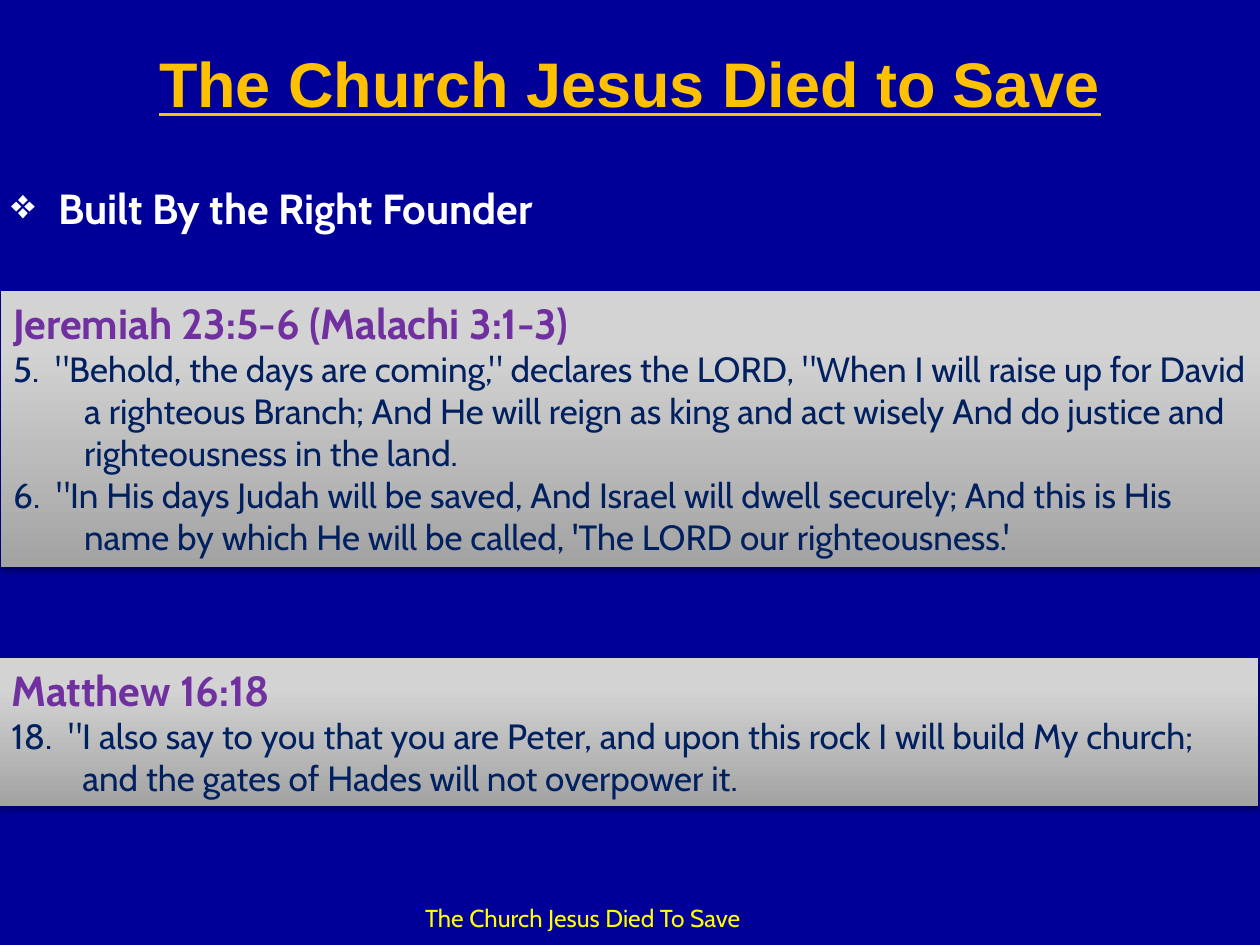
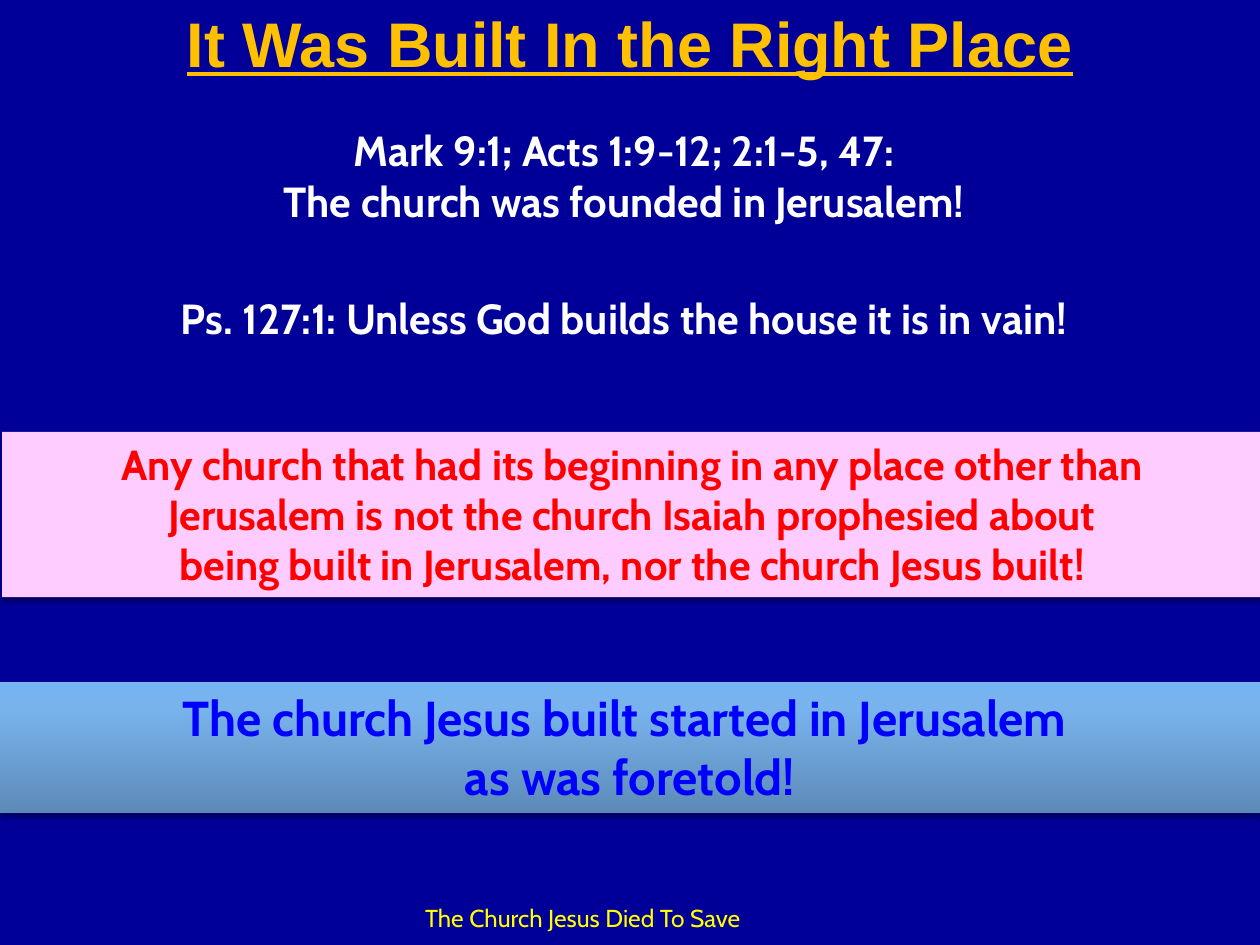
import copy

import lxml.etree
import pptx
import pptx.dml.color
import pptx.enum.shapes
import pptx.enum.text
import pptx.oxml.ns
import pptx.util

Pt = pptx.util.Pt
ALIGN = pptx.enum.text.PP_ALIGN
ANCHOR = pptx.enum.text.MSO_ANCHOR
qn = pptx.oxml.ns.qn

WIDTH, HEIGHT = 720, 540
NAVY, GOLD, YELLOW, WHITE = "000099", "FFC000", "FFFF00", "FFFFFF"
PURPLE, INK, RED, BLUE, PINK = "7030A0", "002060", "FF0000", "0000FF", "FFCCFF"
SILVER = ((0, "A3A3A3"), (0.8, "D3D3D3"), (1, "D4D4D4"))
SKY = ((0, "5D8AB7"), (0.8, "78B3ED"), (1, "76B4F1"))
FOOTER = "The Church Jesus Died To Save"


def rgb(value):
    """Turn a hex string into a colour."""
    return pptx.dml.color.RGBColor.from_string(value)


class Deck:
    """Hold the shared style and the current slide."""

    def __init__(self):
        """Start an empty presentation."""
        self.presentation = pptx.Presentation()
        self.presentation.slide_width = Pt(WIDTH)
        self.presentation.slide_height = Pt(HEIGHT)
        self.slide = None

    def add_slide(self, title, title_top):
        """Add a navy slide with its title and footer."""
        self.slide = self.presentation.slides.add_slide(self.presentation.slide_layouts[6])
        self.slide.background.fill.solid()
        self.slide.background.fill.fore_color.rgb = rgb(NAVY)
        heading = self.add_text((0, title_top, WIDTH, 48), [title], 36, GOLD, font="Arial")
        heading.text_frame.vertical_anchor = ANCHOR.MIDDLE
        heading.text_frame.paragraphs[0].runs[0].font.underline = True
        self.add_text((162, 512.6, 342, 27.4), [FOOTER], 14, YELLOW, bold=False)

    def add_text(self, box, lines, size, color, **style):
        """Add a text box of equally styled lines."""
        shape = self.slide.shapes.add_textbox(*map(Pt, box))
        self.set_lines(shape, lines, size, color, **style)
        return shape

    def set_lines(self, shape, lines, size, color, **style):
        """Fill a shape with equally styled lines."""
        shape.text_frame.word_wrap = True
        shape.text_frame.text = "\n".join(lines)
        for paragraph in shape.text_frame.paragraphs:
            self.style_paragraph(paragraph, size, color, **style)

    def style_paragraph(self, paragraph, size, color, bold=True, font="Cabin",
                        align=ALIGN.CENTER, hanging=0, bullet=None):
        """Set the alignment, hanging indent, bullet and font of a paragraph."""
        paragraph.alignment = align
        properties = paragraph._p.get_or_add_pPr()
        properties.set("marL", str(Pt(hanging)))
        properties.set("indent", str(-Pt(hanging)))
        if bullet:
            lxml.etree.SubElement(properties, qn("a:buChar"), char=bullet)
        for run in paragraph.runs:
            run.font.name = font
            run.font.size = Pt(size)
            run.font.bold = bold
            run.font.color.rgb = rgb(color)

    def add_band(self, box, fill):
        """Add a shadowed band with a solid or gradient fill."""
        shape = self.slide.shapes.add_shape(
            pptx.enum.shapes.MSO_SHAPE.RECTANGLE, *map(Pt, box))
        shape.line.fill.background()
        shape.text_frame.vertical_anchor = ANCHOR.TOP
        if isinstance(fill, str):
            shape.fill.solid()
            shape.fill.fore_color.rgb = rgb(fill)
        else:
            self.fill_gradient(shape, fill)
        self.add_shadow(shape)
        return shape

    def fill_gradient(self, shape, stops):
        """Fill a shape with three stops running upwards."""
        shape.fill.gradient()
        shape.fill.gradient_angle = 90
        stop_list = shape._element.spPr.find(".//" + qn("a:gsLst"))
        stop_list.append(copy.deepcopy(stop_list[-1]))
        for stop, (position, color) in zip(shape.fill.gradient_stops, stops):
            stop.position = position
            stop.color.rgb = rgb(color)

    def add_shadow(self, shape):
        """Give a shape a soft shadow below it."""
        shape.shadow.inherit = False
        effects = shape._element.spPr.find(qn("a:effectLst"))
        shadow = lxml.etree.SubElement(
            effects, qn("a:outerShdw"), blurRad=str(Pt(3.1)), dist=str(Pt(1.8)),
            dir="5400000", rotWithShape="0")
        color = lxml.etree.SubElement(shadow, qn("a:srgbClr"), val="000000")
        lxml.etree.SubElement(color, qn("a:alpha"), val="35000")

    def add_scripture(self, box, reference, verses):
        """Add a silver band with a reference above its verses."""
        shape = self.add_band(box, SILVER)
        self.set_lines(shape, [reference, *verses], 20, INK, bold=False,
                       align=ALIGN.LEFT, hanging=40.5)
        self.style_paragraph(shape.text_frame.paragraphs[0], 24, PURPLE,
                             align=ALIGN.LEFT, hanging=36)

    def add_statement(self, box, fill, lines, size, color):
        """Add a band with bold centred lines."""
        self.set_lines(self.add_band(box, fill), lines, size, color, hanging=36)


def main():
    """Build both slides and save them."""
    deck = Deck()

    deck.add_slide("The Church Jesus Died to Save", 23)
    deck.add_text((-0.7, 101, WIDTH, 36), ["Built By the Right Founder"], 24, WHITE,
                  align=ALIGN.LEFT, hanging=27, bullet="❖")
    deck.add_scripture((0.5, 166.4, 719.5, 157.6), "Jeremiah 23:5-6 (Malachi 3:1-3)", [
        "5.  \"Behold, the days are coming,\" declares the LORD, \"When I will raise up for "
        "David a righteous Branch; And He will reign as king and act wisely And do justice "
        "and righteousness in the land.",
        "6.  \"In His days Judah will be saved, And Israel will dwell securely; And this is "
        "His name by which He will be called, 'The LORD our righteousness.'"])
    deck.add_scripture((-0.5, 376, 719.5, 84.6), "Matthew 16:18", [
        "18.  \"I also say to you that you are Peter, and upon this rock I will build My "
        "church; and the gates of Hades will not overpower it."])

    deck.add_slide("It Was Built In the Right Place", 0)
    deck.add_text((-0.7, 163.6, WIDTH, 36),
                  ["Ps. 127:1: Unless God builds the house it is in vain! "],
                  24, WHITE, hanging=36)
    deck.add_statement((0, 389.6, WIDTH, 75), SKY, [
        "The church Jesus built started in Jerusalem ",
        "as was foretold!"], 28, BLUE)
    deck.add_statement((1.2, 246.8, WIDTH, 94.4), PINK, [
        "Any church that had its beginning in any place other than",
        "Jerusalem is not the church Isaiah prophesied about",
        "being built in Jerusalem, nor the church Jesus built!"], 24, RED)
    deck.add_text((-0.7, 67.8, WIDTH, 65.4), [
        "Mark 9:1; Acts 1:9-12; 2:1-5, 47: ",
        "The church was founded in Jerusalem! "], 24, WHITE, hanging=36)

    deck.presentation.save("out.pptx")


if __name__ == "__main__":
    main()
